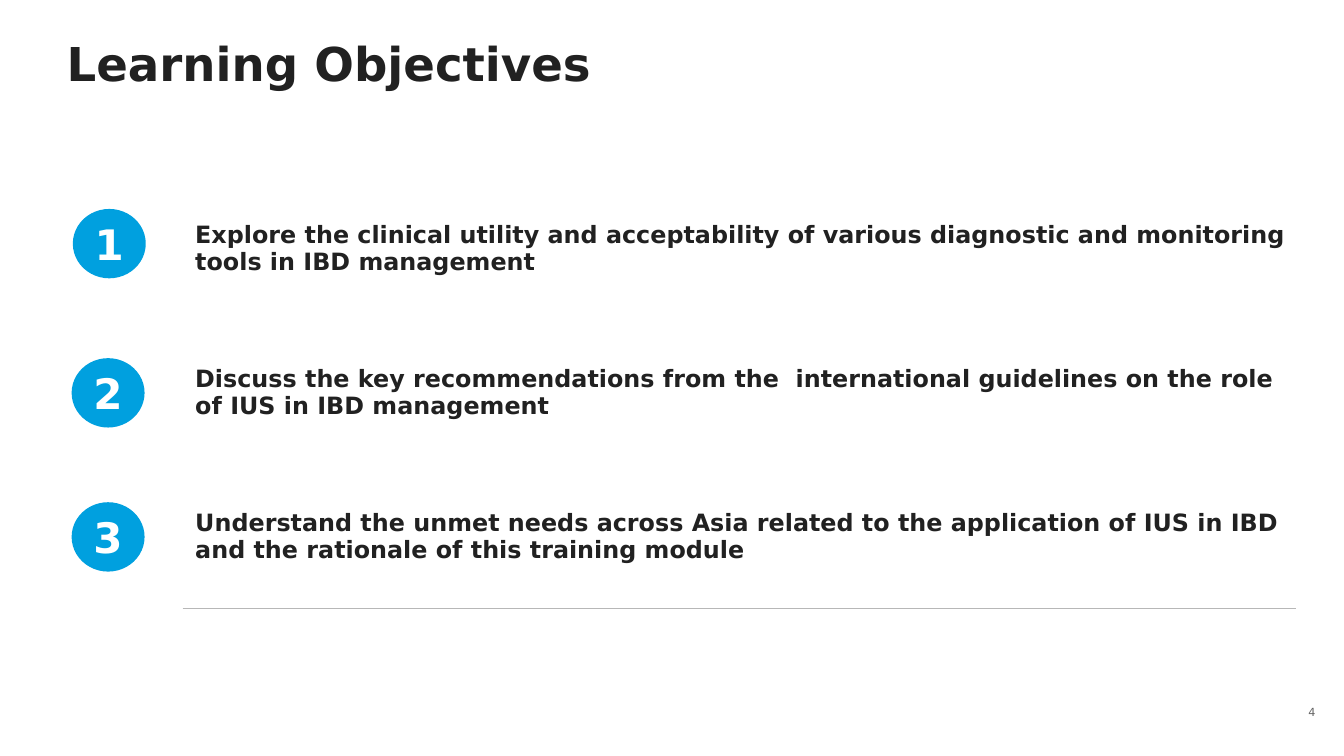
"""Build the Learning Objectives slide with three numbered goals."""
from lxml.etree import SubElement
from pptx import Presentation
from pptx.dml.color import RGBColor
from pptx.enum.shapes import MSO_SHAPE
from pptx.enum.text import MSO_ANCHOR, PP_ALIGN
from pptx.oxml import parse_xml
from pptx.oxml.ns import nsdecls, qn
from pptx.util import Cm, Pt

FONT = "DejaVu Sans"
COLORS = {"text": "212121", "badge": "00A0DF", "white": "FFFFFF", "rule": "B7B7B7", "page": "646464"}
OBJECTIVES = [
    "Explore the clinical utility and acceptability of various diagnostic and monitoring tools in IBD management",
    "Discuss the key recommendations from the  international guidelines on the role of IUS in IBD management",
    "Understand the unmet needs across Asia related to the application of IUS in IBD and the rationale of this training module",
]
BADGE_PLACES = [(1.88, 5.31), (1.85, 9.07), (1.85, 12.7)]
ROW_HEIGHT = Cm(3.63)


def write(frame, text, size, color, bold=True, align=PP_ALIGN.LEFT):
    frame.word_wrap = True
    paragraph = frame.paragraphs[0]
    paragraph.alignment = align
    run = paragraph.add_run()
    run.text = text
    run.font.name = FONT
    run.font.size = Pt(size)
    run.font.bold = bold
    run.font.color.rgb = RGBColor.from_string(COLORS[color])
    return paragraph


def clear_margins(frame):
    frame.margin_left = frame.margin_right = frame.margin_top = frame.margin_bottom = 0


presentation = Presentation()
presentation.slide_width = Cm(33.87)
presentation.slide_height = Cm(19.05)
slide = presentation.slides.add_slide(presentation.slide_layouts[6])

title = slide.shapes.add_textbox(Cm(1.68), Cm(1.04), Cm(28.19), Cm(1.27)).text_frame
clear_margins(title)
write(title, "Learning Objectives", 33.3, "text").line_spacing = 0.9

table = slide.shapes.add_table(
    len(OBJECTIVES), 1, Cm(4.62), Cm(4.45), Cm(28.02), ROW_HEIGHT * len(OBJECTIVES)
).table
table.first_row = False
table.horz_banding = False

for row, objective in enumerate(OBJECTIVES):
    table.rows[row].height = ROW_HEIGHT
    cell = table.cell(row, 0)
    cell.fill.background()
    cell.vertical_anchor = MSO_ANCHOR.MIDDLE
    cell.margin_left, cell.margin_right = Cm(0.3), Cm(0.15)
    cell.margin_top = cell.margin_bottom = Cm(0.1)
    write(cell.text_frame, objective, 17, "text")
    border = parse_xml(f'<a:lnB {nsdecls("a")} w="12700"/>')
    solid = SubElement(border, qn("a:solidFill"))
    SubElement(solid, qn("a:srgbClr"), val=COLORS["rule"])
    cell._tc.get_or_add_tcPr().insert(0, border)

for number, (left, top) in enumerate(BADGE_PLACES, start=1):
    badge = slide.shapes.add_shape(MSO_SHAPE.OVAL, Cm(left), Cm(top), Cm(1.75), Cm(1.66))
    badge.shadow.inherit = False
    badge.fill.solid()
    badge.fill.fore_color.rgb = RGBColor.from_string(COLORS["badge"])
    badge.line.color.rgb = RGBColor.from_string(COLORS["badge"])
    badge.line.width = Pt(2.5)
    clear_margins(badge.text_frame)
    badge.text_frame.vertical_anchor = MSO_ANCHOR.MIDDLE
    write(badge.text_frame, str(number), 30, "white", align=PP_ALIGN.CENTER)

page = slide.shapes.add_textbox(Cm(32.33), Cm(17.5), Cm(1.07), Cm(0.91)).text_frame
page.vertical_anchor = MSO_ANCHOR.MIDDLE
write(page, "4", 8, "page", bold=False, align=PP_ALIGN.RIGHT)

presentation.save("out.pptx")
